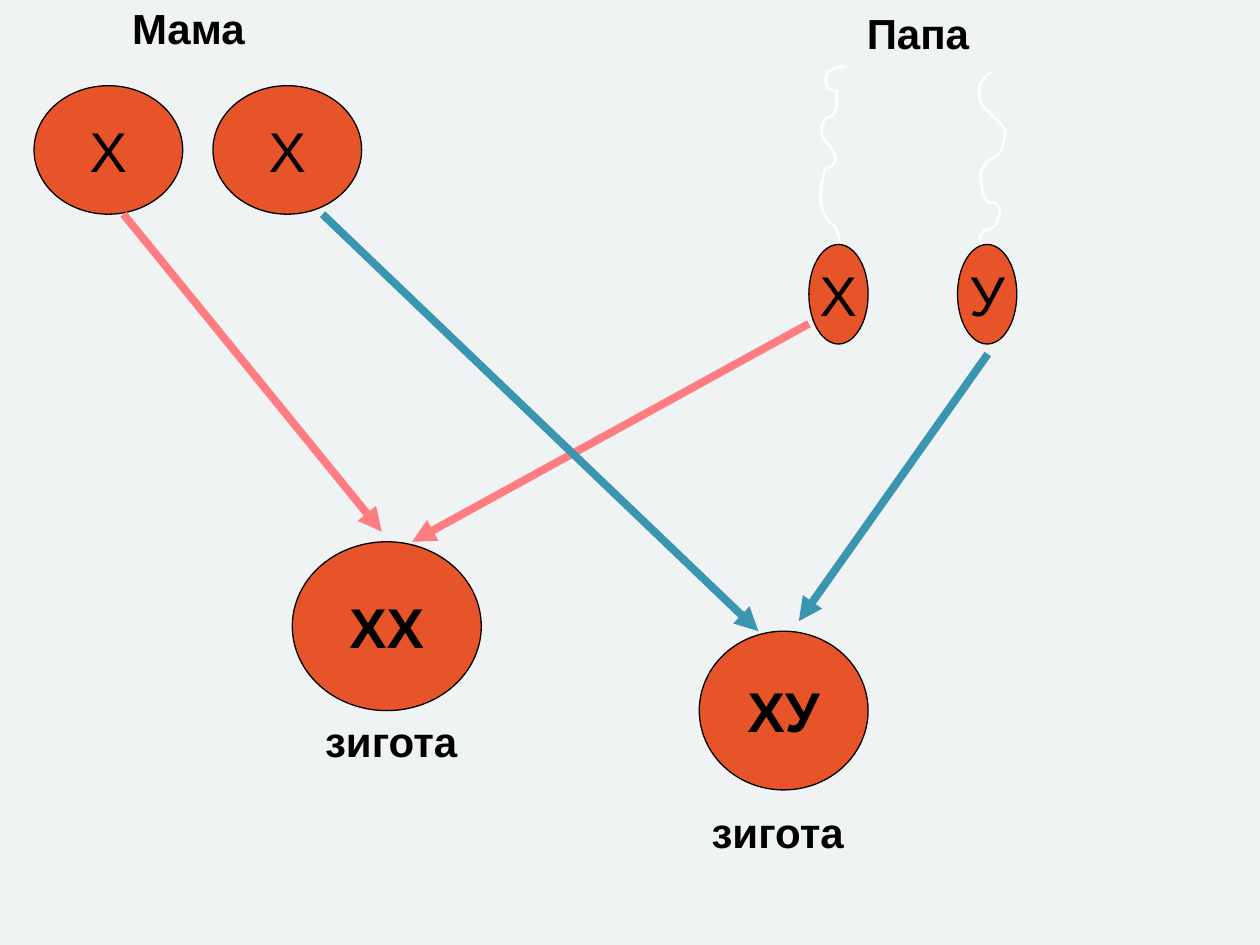
import lxml.etree
import pptx
import pptx.dml.color
import pptx.enum.shapes
import pptx.enum.text
import pptx.oxml.ns
import pptx.util

Inches = pptx.util.Inches
qn = pptx.oxml.ns.qn
PP_ALIGN = pptx.enum.text.PP_ALIGN
MSO_ANCHOR = pptx.enum.text.MSO_ANCHOR

THEME = {
    "font": "Arial", "gene_size": 32, "label_size": 24,
    "background": "F0F3F3", "cell": "E75429", "ink": "000000", "sperm_tail": "FFFFFF",
    "girl": "FF7C80", "boy": "3A96B0",
    "outline_width": 0.75, "tail_width": 1.5, "arrow_width": 4.5,
}

# Sperm tails: a start point, then Bezier triples (control, control, end)
SPERM_TAILS = [
    [(6.72, 0.53),
     (6.69, 0.53), (6.67, 0.53), (6.64, 0.54), (6.61, 0.55), (6.57, 0.57), (6.57, 0.57),
     (6.55, 0.62), (6.54, 0.64), (6.57, 0.70), (6.58, 0.72), (6.61, 0.71), (6.64, 0.72),
     (6.64, 0.78), (6.65, 0.84), (6.63, 0.89), (6.62, 0.92), (6.55, 0.94), (6.55, 0.94),
     (6.50, 1.02), (6.51, 1.10), (6.59, 1.16), (6.64, 1.23), (6.66, 1.31), (6.55, 1.34),
     (6.50, 1.51), (6.48, 1.70), (6.63, 1.80), (6.67, 1.92), (6.66, 1.82), (6.66, 2.01)],
    [(7.87, 0.57),
     (7.82, 0.60), (7.79, 0.64), (7.77, 0.70), (7.78, 0.80), (7.77, 0.83), (7.84, 0.88),
     (7.89, 0.94), (7.95, 0.97), (7.98, 1.05), (7.98, 1.05), (7.96, 1.17), (7.95, 1.19),
     (7.93, 1.23), (7.84, 1.28), (7.84, 1.28), (7.79, 1.36), (7.80, 1.32), (7.78, 1.39),
     (7.79, 1.43), (7.79, 1.57), (7.84, 1.60), (7.86, 1.61), (7.88, 1.61), (7.90, 1.61),
     (7.94, 1.67), (7.95, 1.66), (7.91, 1.77), (7.90, 1.81), (7.81, 1.83), (7.81, 1.83),
     (7.77, 1.88), (7.76, 1.89), (7.80, 1.96), (7.80, 1.98), (7.83, 1.96), (7.83, 1.98),
     (7.84, 2.02), (7.83, 2.06), (7.83, 2.10)],
]

EGG, SPERM = (1.18, 1.02), (0.47, 0.79)

# Cells: genes, (left, top), (width, height), bold
CELLS = [
    ("Х", (6.42, 1.94), SPERM, False),
    ("У", (7.60, 1.94), SPERM, False),
    ("Х", (0.27, 0.68), EGG, False),
    ("Х", (1.69, 0.68), EGG, False),
    ("ХХ", (2.32, 4.30), (1.50, 1.34), True),
    ("ХУ", (5.55, 5.01), (1.34, 1.26), True),
]

# Inheritance arrows: child, start, end
ARROWS = [
    ("girl", (0.98, 1.70), (3.03, 4.22)),
    ("girl", (6.42, 2.57), (3.27, 4.30)),
    ("boy", (2.56, 1.70), (6.02, 5.01)),
    ("boy", (7.84, 2.81), (6.34, 4.93)),
]

# Labels: text, (left, top), (width, height), alignment, anchor
LABELS = [
    ("Папа", (6.34, 0), (1.89, 0.52), PP_ALIGN.CENTER, MSO_ANCHOR.MIDDLE),
    ("Мама", (0.59, 0), (1.81, 0.44), PP_ALIGN.CENTER, MSO_ANCHOR.MIDDLE),
    ("зигота", (2.32, 5.64), (1.57, 0.47), PP_ALIGN.CENTER, MSO_ANCHOR.MIDDLE),
    ("зигота", (5.55, 6.35), (1.50, 0.50), PP_ALIGN.LEFT, MSO_ANCHOR.TOP),
]


def color(name):
    return pptx.dml.color.RGBColor.from_string(THEME[name])


def inches(*values):
    return [Inches(value) for value in values]


def set_line(line, color_name, width_name):
    line.color.rgb = color(color_name)
    line.width = pptx.util.Pt(THEME[width_name])


def write(frame, text, size_name, bold, align, anchor, wrap):
    frame.word_wrap = wrap
    frame.vertical_anchor = anchor
    paragraph = frame.paragraphs[0]
    paragraph.alignment = align
    run = paragraph.add_run()
    run.text = text
    run.font.name = THEME["font"]
    run.font.size = pptx.util.Pt(THEME[size_name])
    run.font.bold = bold
    run.font.color.rgb = color("ink")


def add_sperm_tail(slide, knots):
    knots = [inches(*knot) for knot in knots]
    builder = slide.shapes.build_freeform(*knots[0])
    builder.add_line_segments(knots[3::3], close=False)
    sperm_tail = builder.convert_to_shape()
    sperm_tail.shadow.inherit = False
    sperm_tail.fill.background()
    set_line(sperm_tail.line, "sperm_tail", "tail_width")

    # Bend each segment: two control points go before its end point
    segments = list(sperm_tail._element.iter(qn("a:lnTo")))
    for segment, *controls in zip(segments, knots[1::3], knots[2::3]):
        segment.tag = qn("a:cubicBezTo")
        for place, (x, y) in enumerate(controls):
            control = lxml.etree.Element(qn("a:pt"), x=str(x - sperm_tail.left),
                                         y=str(y - sperm_tail.top))
            segment.insert(place, control)


def add_cell(slide, genes, place, size, bold):
    cell = slide.shapes.add_shape(pptx.enum.shapes.MSO_SHAPE.OVAL, *inches(*place, *size))
    cell.shadow.inherit = False
    cell.fill.solid()
    cell.fill.fore_color.rgb = color("cell")
    set_line(cell.line, "ink", "outline_width")
    write(cell.text_frame, genes, "gene_size", bold, PP_ALIGN.CENTER, MSO_ANCHOR.MIDDLE, False)


def add_arrow(slide, child, start, end):
    arrow = slide.shapes.add_connector(pptx.enum.shapes.MSO_CONNECTOR.STRAIGHT,
                                       *inches(*start, *end))
    set_line(arrow.line, child, "arrow_width")
    lxml.etree.SubElement(arrow.line._get_or_add_ln(), qn("a:tailEnd"), type="triangle")
    lxml.etree.SubElement(arrow._element.spPr, qn("a:effectLst"))


def add_label(slide, text, place, size, align, anchor):
    label = slide.shapes.add_textbox(*inches(*place, *size))
    write(label.text_frame, text, "label_size", True, align, anchor, align == PP_ALIGN.LEFT)


def main():
    deck = pptx.Presentation()
    deck.slide_width, deck.slide_height = inches(10, 7.5)
    slide = deck.slides.add_slide(deck.slide_layouts[6])
    slide.background.fill.solid()
    slide.background.fill.fore_color.rgb = color("background")

    # Back to front
    for knots in SPERM_TAILS:
        add_sperm_tail(slide, knots)
    for cell in CELLS:
        add_cell(slide, *cell)
    for arrow in ARROWS:
        add_arrow(slide, *arrow)
    for label in LABELS:
        add_label(slide, *label)

    deck.save("out.pptx")


if __name__ == "__main__":
    main()
